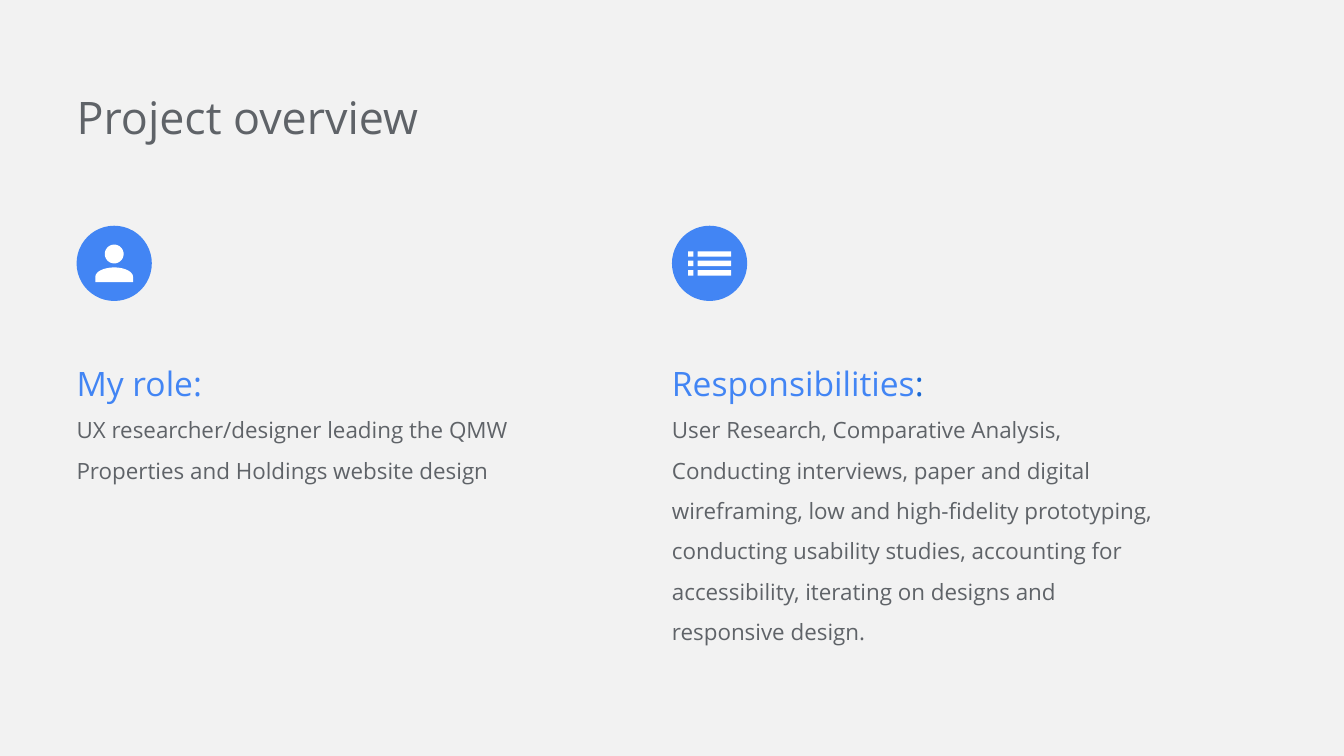
from math import cos, pi, sin

from pptx import Presentation
from pptx.dml.color import RGBColor
from pptx.enum.shapes import MSO_SHAPE as SHAPE
from pptx.enum.text import MSO_ANCHOR as ANCHOR, MSO_AUTO_SIZE as AUTO, PP_ALIGN as ALIGN
from pptx.util import Inches, Pt

COLORS = {"bg": "F2F2F2", "blue": "4285F4", "dark_blue": "1967D2",
          "gray": "5F6368", "white": "FFFFFF"}
FONT = "Open Sans"
FRAME = {"margin_left": 0, "margin_top": Inches(0.1), "margin_right": Inches(0.1),
         "margin_bottom": Inches(0.1), "word_wrap": True,
         "auto_size": AUTO.NONE, "vertical_anchor": ANCHOR.TOP}
SLIDE_W = Inches(10)
SLIDE_H = SLIDE_W * 9 // 16
LEFT_X, RIGHT_X = 0.57, 5
ICON_Y, ICON_SIZE = 1.68, 0.56
COLUMNS = [
    (LEFT_X, 1.26, [("My role:", "blue")],
     "UX researcher/designer leading the QMW Properties and Holdings website design"),
    (RIGHT_X, 2.47, [("Responsibilities", "blue"), (":", "dark_blue")],
     "User Research, Comparative Analysis, Conducting interviews, paper and digital "
     "wireframing, low and high-fidelity prototyping, conducting usability studies, "
     "accounting for accessibility, iterating on designs and responsive design."),
]


def rgb(name):
    return RGBColor.from_string(COLORS[name])


def set_attrs(obj, values):
    for name, value in values.items():
        setattr(obj, name, value)


def write_paragraph(p, runs, size, spacing):
    set_attrs(p, {"alignment": ALIGN.LEFT, "line_spacing": spacing})
    for text, color in runs:
        r = p.add_run()
        r.text = text
        set_attrs(r.font, {"name": FONT, "size": Pt(size)})
        r.font.color.rgb = rgb(color)


def add_title(s, text):
    title = s.shapes.title
    set_attrs(title, {"left": Inches(LEFT_X), "top": Inches(0.57),
                      "width": Inches(6.73), "height": Inches(0.61)})
    set_attrs(title.text_frame, FRAME)
    write_paragraph(title.text_frame.paragraphs[0], [(text, "gray")], 24, 1.0)


def add_column(s, x, height, heading, body):
    box = s.shapes.add_textbox(Inches(x), Inches(2.45), Inches(3.77), Inches(height))
    tf = box.text_frame
    set_attrs(tf, FRAME)
    write_paragraph(tf.paragraphs[0], heading, 18, 1.5)
    write_paragraph(tf.add_paragraph(), [(body, "gray")], 12, 1.5)


def paint(sp, color):
    sp.shadow.inherit = False
    sp.fill.solid()
    sp.fill.fore_color.rgb = rgb(color)
    sp.line.fill.background()


def add_disc(s, x):
    sp = s.shapes.add_shape(SHAPE.OVAL, Inches(x), Inches(ICON_Y),
                            Inches(ICON_SIZE), Inches(ICON_SIZE))
    paint(sp, "blue")


def add_glyph(s, contours):
    contours = [[(Inches(x), Inches(y)) for x, y in points] for points in contours]
    builder = s.shapes.build_freeform(*contours[0][0])
    for i, points in enumerate(contours):
        if i:
            builder.move_to(*points[0])
        builder.add_line_segments(points[1:], close=True)
    paint(builder.convert_to_shape(), "white")


def arc(cx, cy, rx, ry, start, end, steps=40):
    angles = [start + (end - start) * i / steps for i in range(steps + 1)]
    return [(cx + rx * cos(a), cy + ry * sin(a)) for a in angles]


def person(x):
    cx = x + ICON_SIZE / 2
    head = arc(cx, 1.89, 0.07, 0.07, 0, 2 * pi)
    body = arc(cx, 2.06, 0.14, 0.07, pi, 2 * pi) + [(cx + 0.14, 2.1), (cx - 0.14, 2.1)]
    return [head, body]


def bullet_list(x):
    rows = [1.87 + 0.07 * i for i in range(3)]
    bars = [(x + 0.12, 0.04), (x + 0.19, 0.25)]
    return [[(left, y), (left + w, y), (left + w, y + 0.04), (left, y + 0.04)]
            for y in rows for left, w in bars]


def main():
    prs = Presentation()
    set_attrs(prs, {"slide_width": SLIDE_W, "slide_height": SLIDE_H})
    s = prs.slides.add_slide(prs.slide_layouts[5])
    s.background.fill.solid()
    s.background.fill.fore_color.rgb = rgb("bg")
    add_title(s, "Project overview")
    for column, glyph in zip(COLUMNS, (person, bullet_list)):
        add_column(s, *column)
        add_disc(s, column[0])
        add_glyph(s, glyph(column[0]))
    prs.save("out.pptx")


if __name__ == "__main__":
    main()
